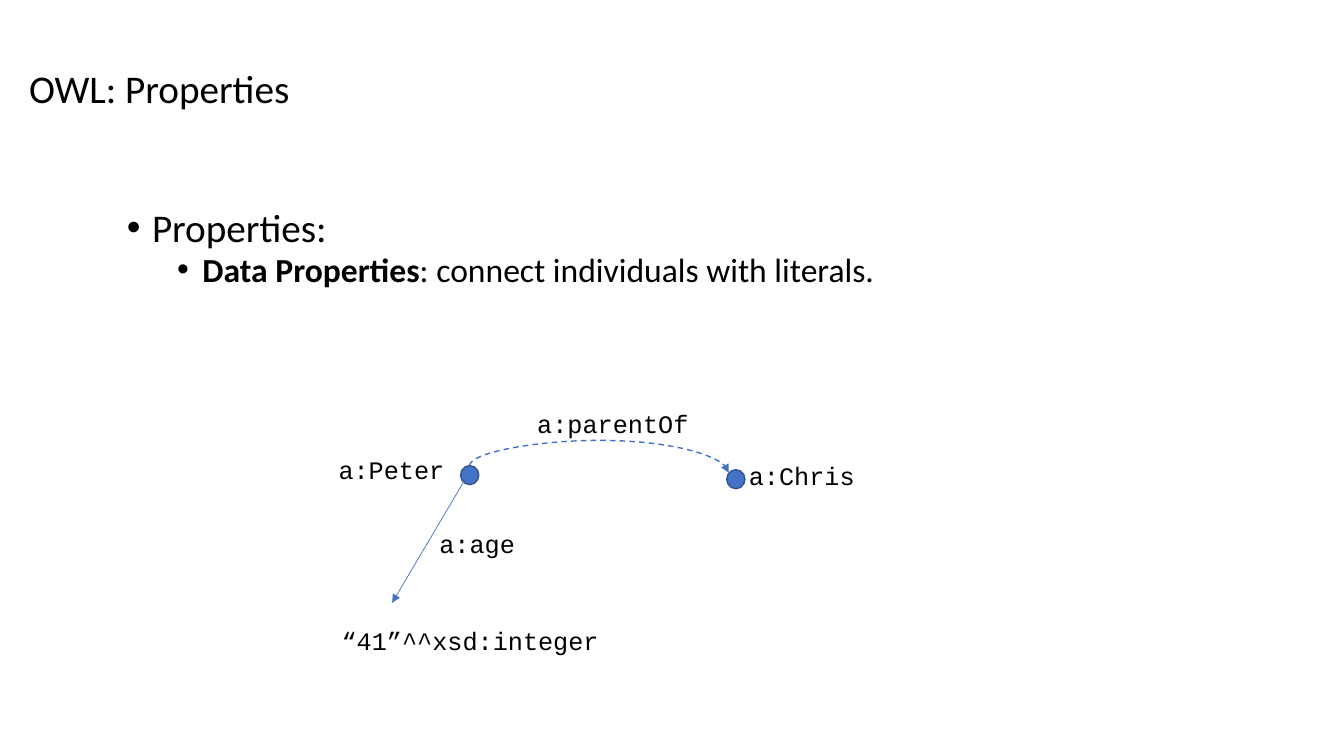
from dataclasses import dataclass

from lxml.etree import SubElement
from pptx import Presentation
from pptx.dml.color import RGBColor
from pptx.enum.dml import MSO_LINE
from pptx.enum.shapes import MSO_CONNECTOR, MSO_SHAPE
from pptx.enum.text import MSO_ANCHOR
from pptx.oxml.ns import qn
from pptx.util import Pt

COLORS = {"text": "000000", "accent": "4472C4", "outline": "325491"}
BODY = {"name": "Calibri", "size": Pt(28)}
SUB = {"name": "Calibri", "size": Pt(24)}
CODE = {"name": "Courier New", "size": Pt(18)}
NODE_W, NODE_H = 13, 13.6
ARC_RISE = 18


@dataclass
class Label:
    text: str
    x: float
    y: float
    w: float


@dataclass
class Node:
    x: float
    y: float


@dataclass
class Bullet:
    runs: list[tuple[str, bool]]
    level: int
    margin: float
    before: float
    font: dict


LABELS = [
    Label("a:Peter", 234.7, 321.1, 101.5),
    Label("a:Chris", 527.8, 325.4, 101.5),
    Label("a:parentOf", 376.6, 288, 142.6),
    Label("a:age", 306.7, 373.7, 142.6),
    Label("“41”^^xsd:integer", 236.9, 442.8, 212.4),
]
PETER, CHRIS = Node(329, 332.6), Node(519.1, 335.5)
BULLETS = [
    Bullet([("Properties:", False)], 0, 18, 10, BODY),
    Bullet([("Data Properties", True),
            (": connect individuals with literals.", False)], 1, 54, 5, SUB),
]


def rgb(key: str) -> RGBColor:
    return RGBColor.from_string(COLORS[key])


def add_box(s, x: float, y: float, w: float, h: float):
    tf = s.shapes.add_textbox(Pt(x), Pt(y), Pt(w), Pt(h)).text_frame
    tf.word_wrap = True
    return tf


def add_run(p, text: str, font: dict, bold: bool = False) -> None:
    r = p.add_run()
    r.text = text
    for key, value in {**font, "bold": bold}.items():
        setattr(r.font, key, value)
    r.font.color.rgb = rgb("text")


def add_bullet(p, bullet: Bullet) -> None:
    for key, value in {"level": bullet.level, "line_spacing": 0.8,
                       "space_before": Pt(bullet.before)}.items():
        setattr(p, key, value)
    pPr = p._p.get_or_add_pPr()
    pPr.set("marL", str(Pt(bullet.margin)))
    pPr.set("indent", str(Pt(-18)))
    SubElement(pPr, qn("a:buFont"), typeface="Arial")
    SubElement(pPr, qn("a:buChar"), char="•")
    for text, bold in bullet.runs:
        add_run(p, text, bullet.font, bold)


def add_node(s, node: Node) -> None:
    sp = s.shapes.add_shape(MSO_SHAPE.OVAL, Pt(node.x), Pt(node.y), Pt(NODE_W), Pt(NODE_H))
    sp.shadow.inherit = False
    sp.fill.solid()
    sp.fill.fore_color.rgb = rgb("accent")
    sp.line.color.rgb = rgb("outline")
    sp.line.width = Pt(1)


def add_arrow(s, kind, x1: float, y1: float, x2: float, y2: float, width: float):
    cxn = s.shapes.add_connector(kind, Pt(x1), Pt(y1), Pt(x2), Pt(y2))
    cxn.line.color.rgb = rgb("accent")
    cxn.line.width = Pt(width)
    SubElement(cxn.line._get_or_add_ln(), qn("a:tailEnd"), type="triangle")
    SubElement(cxn._element.spPr, qn("a:effectLst"))
    return cxn


def add_arc(s, x1: float, y1: float, x2: float, y2: float) -> None:
    """Dashed arc above both ends: a curved connector turned by 270 degrees."""
    cx, cy = (x1 + x2) / 2, (y1 + y2) / 2
    half_w, half_h = (y2 - y1) / 2, (x2 - x1) / 2
    cxn = add_arrow(s, MSO_CONNECTOR.CURVE, cx + half_w, cy - half_h,
                    cx - half_w, cy + half_h, 1)
    cxn.line.dash_style = MSO_LINE.DASH
    spPr = cxn._element.spPr
    spPr.find(qn("a:xfrm")).set("rot", str(270 * 60000))
    avLst = spPr.find(qn("a:prstGeom")).find(qn("a:avLst"))
    bend = round(-ARC_RISE / (y2 - y1) * 100000)
    SubElement(avLst, qn("a:gd"), name="adj1", fmla=f"val {bend}")


def main() -> None:
    prs = Presentation()
    prs.slide_width, prs.slide_height = Pt(960), Pt(540)
    s = prs.slides.add_slide(prs.slide_layouts[6])

    tf = add_box(s, 13.7, 24.5, 779, 81.4)
    tf.vertical_anchor = MSO_ANCHOR.MIDDLE
    tf.paragraphs[0].line_spacing = 0.9
    add_run(tf.paragraphs[0], "OWL: Properties", BODY)

    tf = add_box(s, 83.5, 148.3, 807.8, 82.1)
    for i, bullet in enumerate(BULLETS):
        add_bullet(tf.add_paragraph() if i else tf.paragraphs[0], bullet)

    for node in (PETER, CHRIS):
        add_node(s, node)
    add_arc(s, PETER.x + NODE_W / 2, PETER.y, CHRIS.x + 1.5, CHRIS.y + 2.2)
    add_arrow(s, MSO_CONNECTOR.STRAIGHT, 331.2, 344.2, 280.1, 430.6, 0.5)
    for label in LABELS:
        tf = add_box(s, label.x, label.y, label.w, 28.8)
        add_run(tf.paragraphs[0], label.text, CODE)

    prs.save("out.pptx")


if __name__ == "__main__":
    main()
